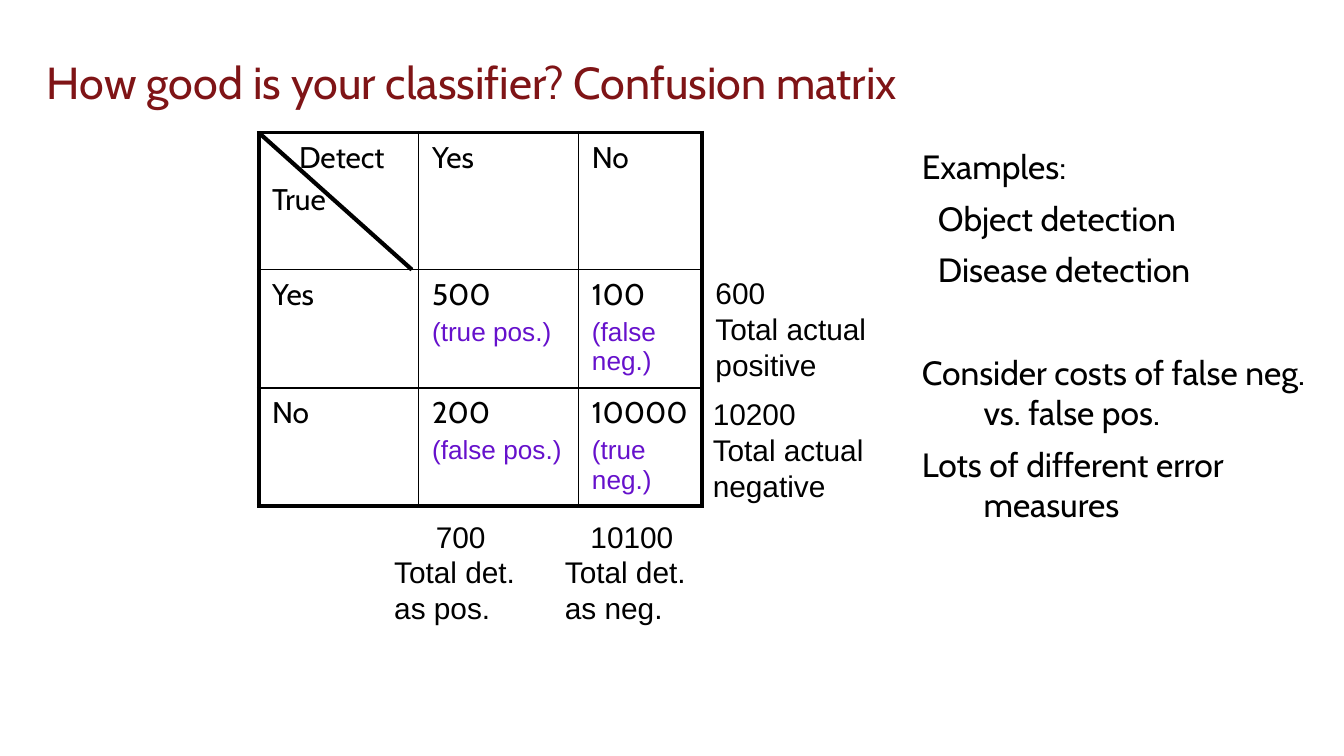
from dataclasses import dataclass

from lxml import etree
from pptx import Presentation
from pptx import util as u
from pptx.dml.color import RGBColor
from pptx.enum import shapes, text
from pptx.oxml import ns


@dataclass(frozen=True)
class Theme:
    """Colours, fonts, type sizes and line widths."""
    ink: str = "000000"
    title: str = "7F1416"
    note: str = "6611CC"
    head_font: str = "Cabin"
    plain_font: str = "Arial"
    title_pt: int = 24
    body_pt: int = 18
    cell_pt: int = 16
    note_pt: int = 14
    thick: float = 2.25
    thin: float = 1


@dataclass(frozen=True)
class Box:
    """A rectangle in grid columns and rows."""
    x: float
    y: float
    w: float
    h: float


T = Theme()
COLS, ROWS = 100, 56.25
UNIT = u.Inches(10) / COLS
MATRIX_COLS = (11.9, 11.9, 9.2)
MATRIX_ROWS = (10.2, 8.8, 8.8)


def grid(n):
    """Turn grid steps into a length."""
    return u.Emu(round(n * UNIT))


def add_text(p, words, size, font, color, before=0, left=0, first=0):
    """Write one run into a paragraph, with spacing and indents."""
    pPr = p._p.get_or_add_pPr()
    pPr.set("marL", str(grid(left)))
    pPr.set("indent", str(grid(first)))
    if before:
        p.space_before = u.Pt(before)
    r = p.add_run()
    r.text = words
    r.font.size, r.font.name = u.Pt(size), font
    r.font.color.rgb = RGBColor.from_string(color)


def next_paragraph(tf, i):
    """Return the first paragraph of a frame, or a new one."""
    return tf.add_paragraph() if i else tf.paragraphs[0]


def add_box(s, box, inset_y=0.5):
    """Add a wrapping text box and return its frame."""
    sp = s.shapes.add_textbox(*map(grid, (box.x, box.y, box.w, box.h)))
    tf = sp.text_frame
    tf.word_wrap = True
    tf.margin_left = tf.margin_right = grid(1)
    tf.margin_top = tf.margin_bottom = grid(inset_y)
    return tf


def add_title(s, box):
    """Place the title at the bottom of its box."""
    tf = add_box(s, box, 1)
    tf.vertical_anchor = text.MSO_ANCHOR.BOTTOM
    add_text(tf.paragraphs[0], "How good is your classifier? Confusion matrix",
             T.title_pt, T.head_font, T.title)


def add_remarks(s, box):
    """Place the examples and remarks with hanging indents."""
    remarks = (("Examples:", 0, 5), ("Object detection", 6, 6.2),
               ("Disease detection", 6, 6.2),
               ("Consider costs of false neg. vs. false pos.", 33.5, 5),
               ("Lots of different error measures", 6, 5))
    tf = add_box(s, box, 1)
    for i, (words, before, left) in enumerate(remarks):
        add_text(next_paragraph(tf, i), words, T.body_pt, T.head_font, T.ink,
                 before, left, -4.6)


def set_borders(cell, widths):
    """Draw the left, right, top and bottom edges of a cell."""
    tcPr = cell._tc.get_or_add_tcPr()
    for side, width in zip("LRTB", widths):
        ln = etree.SubElement(tcPr, ns.qn(f"a:ln{side}"), w=str(u.Pt(width)))
        fill = etree.SubElement(ln, ns.qn("a:solidFill"))
        etree.SubElement(fill, ns.qn("a:srgbClr"), val=T.ink)


def add_matrix(s, box):
    """Place the confusion matrix and the diagonal of its corner cell."""
    label = (T.cell_pt, T.head_font, T.ink)
    note = (T.note_pt, T.plain_font, T.note)
    content = ((("Detect", "True"), ("Yes",), ("No",)),
               (("Yes",), ("500", "(true pos.)"), ("100", "(false neg.)")),
               (("No",), ("200", "(false pos.)"), ("10000", "(true neg.)")))
    tbl = s.shapes.add_table(3, 3, *map(grid, (box.x, box.y, box.w, box.h))).table
    tbl.first_row = tbl.horz_banding = False
    for i, (w, h) in enumerate(zip(MATRIX_COLS, MATRIX_ROWS)):
        tbl.columns[i].width, tbl.rows[i].height = grid(w), grid(h)
    for row, entries in enumerate(content):
        for col, lines in enumerate(entries):
            cell = tbl.cell(row, col)
            outer = (col == 0, col == 2, row == 0, row == 2)
            set_borders(cell, [T.thick if o else T.thin for o in outer])
            cell.fill.background()
            for i, words in enumerate(lines):
                style = note if words.startswith("(") else label
                add_text(next_paragraph(cell.text_frame, i), words, *style,
                         before=0.2 * style[0] if i else 0,
                         first=2 if words == "Detect" else 0)
    ln = s.shapes.add_connector(shapes.MSO_CONNECTOR.STRAIGHT, *map(
        grid, (box.x, box.y, box.x + 11.4, box.y + MATRIX_ROWS[0])))
    ln.line.color.rgb = RGBColor.from_string(T.ink)
    ln.line.width = u.Pt(T.thick)
    etree.SubElement(ln._element.spPr, ns.qn("a:effectLst"))


def add_total(s, box, lines, first=0):
    """Place a total and its two-line caption."""
    tf = add_box(s, box)
    tf.auto_size = text.MSO_AUTO_SIZE.SHAPE_TO_FIT_TEXT
    for i, words in enumerate(lines):
        add_text(next_paragraph(tf, i), words, T.cell_pt, T.plain_font, T.ink,
                 first=0 if i else first)


def add_totals(s, box):
    """Place row totals right of the matrix and column totals below it."""
    right, bottom = box.x + box.w, box.y + box.h
    actual, detected = "Total actual", "Total det."
    add_total(s, Box(right - 0.2, box.y + 19.1, 15.1, 9.3),
              ("10200", actual, "negative"))
    add_total(s, Box(right, box.y + 10.1, 13.9, 9.3), ("600", actual, "positive"))
    add_total(s, Box(box.x + 9.1, bottom + 0.4, 13.4, 9.3),
              ("700", detected, "as pos."), 3.1)
    add_total(s, Box(box.x + 21.8, bottom + 0.4, 13.4, 9.3),
              ("10100", detected, "as neg."), 1.9)


def main():
    """Build the slide and save it."""
    prs = Presentation()
    prs.slide_width, prs.slide_height = grid(COLS), grid(ROWS)
    s = prs.slides.add_slide(prs.slide_layouts[6])
    matrix = Box(19.25, 9.87, sum(MATRIX_COLS), sum(MATRIX_ROWS))
    add_title(s, Box(2.5, 0, 94.8, 9.1))
    add_remarks(s, Box(67.2, 9.87, 31.8, 37.3))
    add_matrix(s, matrix)
    add_totals(s, matrix)
    prs.save("out.pptx")


if __name__ == "__main__":
    main()
